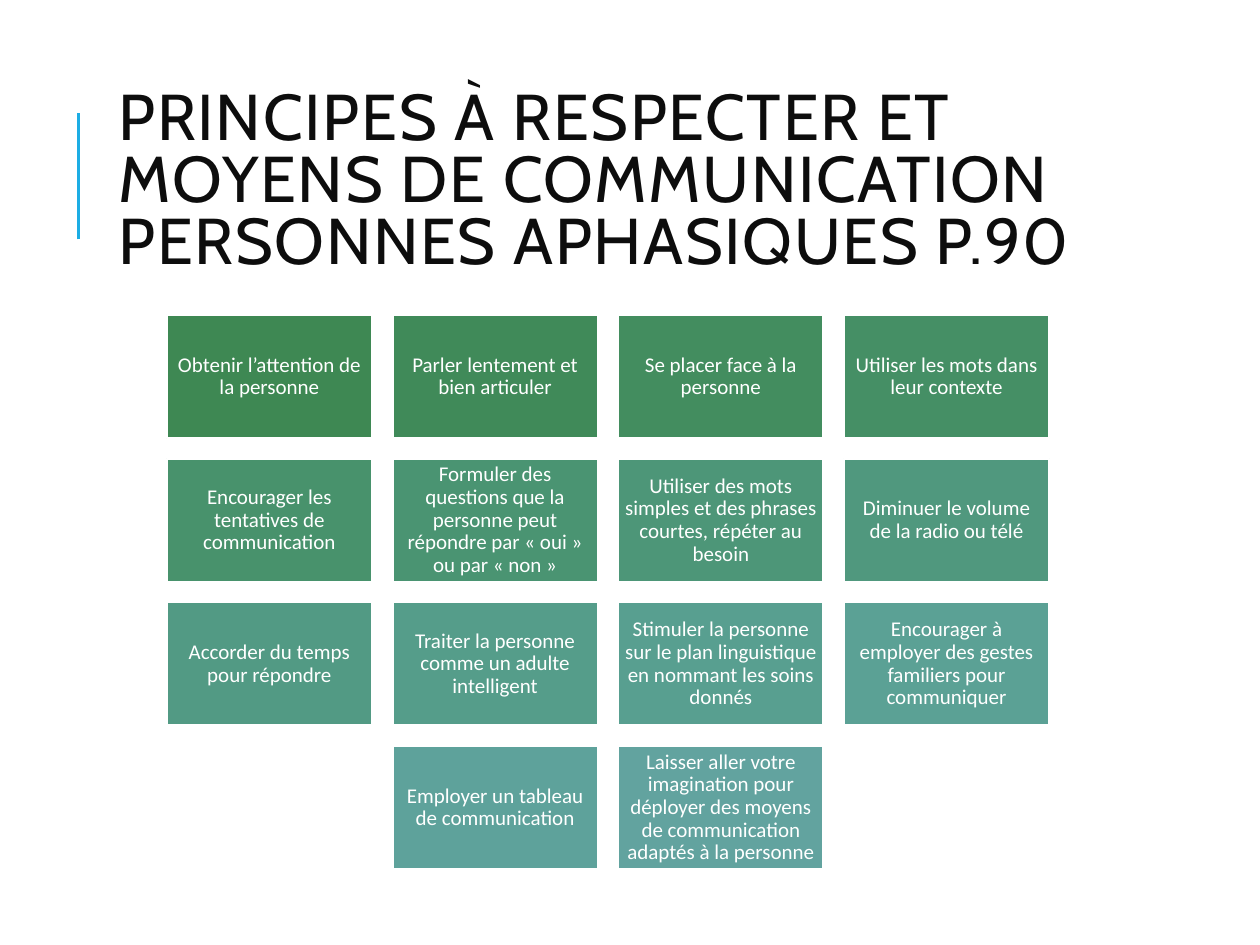
import colorsys

import pptx
import pptx.dml.color
import pptx.enum.shapes
import pptx.enum.text
import pptx.oxml.ns
import pptx.util
from lxml import etree

Pt = pptx.util.Pt
Align = pptx.enum.text.PP_ALIGN

# Content
TITLE = "PRINCIPES À RESPECTER ET MOYENS DE COMMUNICATION PERSONNES APHASIQUES P.90"
PRINCIPLES = [
    "Obtenir l’attention de la personne",
    "Parler lentement et bien articuler",
    "Se placer face à la personne",
    "Utiliser les mots dans leur contexte",
    "Encourager les tentatives de communication",
    "Formuler des questions que la personne peut répondre par « oui » ou par « non »",
    "Utiliser des mots simples et des phrases courtes, répéter au besoin",
    "Diminuer le volume de la radio ou télé",
    "Accorder du temps pour répondre",
    "Traiter la personne comme un adulte intelligent",
    "Stimuler la personne sur le plan linguistique en nommant les soins donnés",
    "Encourager à employer des gestes familiers pour communiquer",
    "Employer un tableau de communication",
    "Laisser aller votre imagination pour déployer des moyens de communication adaptés à la personne",
]

# Theme and layout, lengths in points
THEME = {
    "title_font": "Cabin", "title_size": 37, "title_color": "0D0D0D",
    "body_font": "Calibri", "body_size": 12, "white": "FFFFFF",
    "accent": "1CADE4", "first_fill": "3E8853", "last_fill": "62A39F",
}
TITLE_BOX = (60.5, 46, 574, 118)
ACCENT_X, ACCENT_TOP, ACCENT_BOTTOM = 44.9, 64.8, 136.8
COLUMNS = 4
GRID_LEFT, GRID_TOP = 95.3, 180
CARD_WIDTH, CARD_HEIGHT, GAP = 117.3, 70.4, 11.7


def rgb(color):
    return pptx.dml.color.RGBColor.from_string(color)


def blend(start, end, share):
    """Colour between two others, measured in hue, lightness and saturation."""
    first, last = (
        colorsys.rgb_to_hls(*(channel / 255 for channel in rgb(color)))
        for color in (start, end)
    )
    mixed = [a + (b - a) * share for a, b in zip(first, last)]
    return "".join(f"{round(c * 255):02X}" for c in colorsys.hls_to_rgb(*mixed))


def write_text(shape, text, *, font, size, color, align, line_spacing, inset, tracking=0):
    frame = shape.text_frame
    frame.word_wrap = True
    frame.auto_size = pptx.enum.text.MSO_AUTO_SIZE.NONE
    frame.vertical_anchor = pptx.enum.text.MSO_ANCHOR.MIDDLE
    frame.margin_left = frame.margin_right = Pt(inset[0])
    frame.margin_top = frame.margin_bottom = Pt(inset[1])
    paragraph = frame.paragraphs[0]
    paragraph.alignment = align
    paragraph.line_spacing = line_spacing
    run = paragraph.add_run()
    run.text = text
    run.font.name = font
    run.font.size = Pt(size)
    run.font.color.rgb = rgb(color)
    if tracking:
        run.font._element.set("spc", str(tracking * 100))


def add_title(slide):
    title = slide.shapes.title
    title.left, title.top, title.width, title.height = map(Pt, TITLE_BOX)
    write_text(title, TITLE, font=THEME["title_font"], size=THEME["title_size"],
               color=THEME["title_color"], align=Align.LEFT, line_spacing=0.8,
               inset=(7.2, 3.6), tracking=1)


def add_accent_line(slide):
    line = slide.shapes.add_connector(
        pptx.enum.shapes.MSO_CONNECTOR.STRAIGHT,
        Pt(ACCENT_X), Pt(ACCENT_BOTTOM), Pt(ACCENT_X), Pt(ACCENT_TOP))
    line.line.color.rgb = rgb(THEME["accent"])
    line.line.width = Pt(1.5)
    etree.SubElement(line._element.spPr, pptx.oxml.ns.qn("a:effectLst"))


def add_cards(slide):
    for index, text in enumerate(PRINCIPLES):
        row, column = divmod(index, COLUMNS)
        # A short last row is centred
        row_length = min(COLUMNS, len(PRINCIPLES) - row * COLUMNS)
        column += (COLUMNS - row_length) / 2
        card = slide.shapes.add_shape(
            pptx.enum.shapes.MSO_SHAPE.RECTANGLE,
            Pt(GRID_LEFT + column * (CARD_WIDTH + GAP)),
            Pt(GRID_TOP + row * (CARD_HEIGHT + GAP)),
            Pt(CARD_WIDTH), Pt(CARD_HEIGHT))
        card.shadow.inherit = False
        card.fill.solid()
        card.fill.fore_color.rgb = rgb(blend(
            THEME["first_fill"], THEME["last_fill"], index / (len(PRINCIPLES) - 1)))
        card.line.color.rgb = rgb(THEME["white"])
        card.line.width = Pt(1.25)
        write_text(card, text, font=THEME["body_font"], size=THEME["body_size"],
                   color=THEME["white"], align=Align.CENTER, line_spacing=0.9,
                   inset=(3.6, 3.6))


def main():
    presentation = pptx.Presentation()
    presentation.slide_width, presentation.slide_height = Pt(720), Pt(540)
    slide = presentation.slides.add_slide(presentation.slide_layouts[5])
    add_accent_line(slide)
    add_title(slide)
    add_cards(slide)
    presentation.save("out.pptx")


if __name__ == "__main__":
    main()
